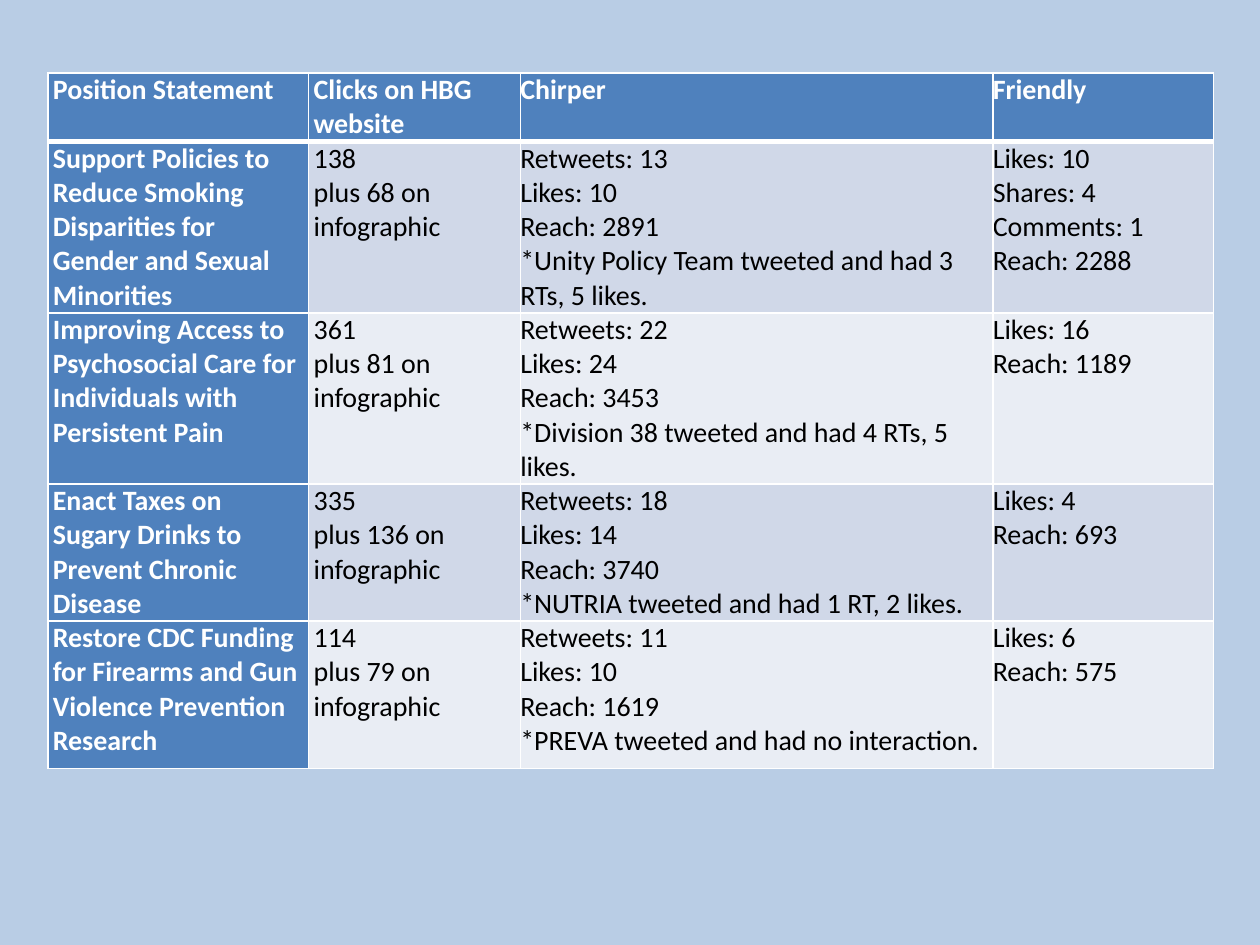
from lxml.etree import SubElement
from pptx import Presentation
from pptx.dml.color import RGBColor as RGB
from pptx.oxml.ns import qn
from pptx.util import Inches, Pt

COLORS = {"bg": "B9CDE5", "head": "4F81BD", "odd": "D0D8E8",
          "even": "E9EDF4", "white": "FFFFFF", "text": "000000"}
FONT, SIZE = "Calibri", 16
COL_WIDTHS = [2.07, 1.68, 3.75, 1.75]
ROW_HEIGHTS = [0.47, 1.17, 0.95, 0.95, 1.17]

# \n starts a paragraph, \v breaks a line within one
ROWS = [
    ["Position Statement", "Clicks on HBG website", "Chirper", "Friendly"],
    ["Support Policies to Reduce Smoking Disparities for Gender and Sexual Minorities",
     "138\vplus 68 on infographic",
     "Retweets: 13\vLikes: 10\vReach: 2891\n*Unity Policy Team tweeted and had 3 RTs, 5 likes.",
     "Likes: 10\nShares: 4\nComments: 1\nReach: 2288"],
    ["Improving Access to Psychosocial Care for Individuals with Persistent Pain",
     "361\vplus 81 on infographic",
     "Retweets: 22\vLikes: 24\vReach: 3453\n*Division 38 tweeted and had 4 RTs, 5 likes.",
     "Likes: 16\nReach: 1189"],
    ["Enact Taxes on Sugary Drinks to Prevent Chronic Disease",
     "335\vplus 136 on infographic",
     "Retweets: 18\vLikes: 14\vReach: 3740\n*NUTRIA tweeted and had 1 RT, 2 likes.",
     "Likes: 4\nReach: 693"],
    ["Restore CDC Funding for Firearms and Gun Violence Prevention Research",
     "114\vplus 79 on infographic",
     "Retweets: 11\vLikes: 10\vReach: 1619\n*PREVA tweeted and had no interaction.",
     "Likes: 6\nReach: 575"],
]


def add_borders(cell, widths):
    """Draw white cell borders; widths maps each side to points."""
    tcPr = cell._tc.get_or_add_tcPr()
    for i, (side, width) in enumerate(widths.items()):
        ln = SubElement(tcPr, qn(f"a:ln{side}"), w=str(Pt(width)))
        fill = SubElement(ln, qn("a:solidFill"))
        SubElement(fill, qn("a:srgbClr"), val=COLORS["white"])
        tcPr.insert(i, ln)  # borders come before the fill


prs = Presentation()
prs.slide_width, prs.slide_height = Inches(10), Inches(7.5)
s = prs.slides.add_slide(prs.slide_layouts[6])

# Background
s.background.fill.solid()
s.background.fill.fore_color.rgb = RGB.from_string(COLORS["bg"])

# Table grid
table = s.shapes.add_table(len(ROWS), len(COL_WIDTHS), Inches(0.38), Inches(0.58),
                           Inches(sum(COL_WIDTHS)), Inches(sum(ROW_HEIGHTS))).table
table.first_col = True
for col, width in zip(table.columns, COL_WIDTHS):
    col.width = Inches(width)
for row, height in zip(table.rows, ROW_HEIGHTS):
    row.height = Inches(height)

# Cells
for r, texts in enumerate(ROWS):
    for c, text in enumerate(texts):
        cell = table.cell(r, c)
        is_head = r == 0 or c == 0
        cell.margin_left = cell.margin_right = Inches(0.04 if c < 2 else 0)
        cell.margin_top = cell.margin_bottom = 0
        cell.fill.solid()
        fill = "head" if is_head else "odd" if r % 2 else "even"
        cell.fill.fore_color.rgb = RGB.from_string(COLORS[fill])
        add_borders(cell, {"L": 1, "R": 1, "T": 3 if r == 1 else 1, "B": 3 if r == 0 else 1})

        cell.text_frame.text = text
        for p in cell.text_frame.paragraphs:
            for run in p.runs:
                run.font.name, run.font.size, run.font.bold = FONT, Pt(SIZE), is_head
                run.font.color.rgb = RGB.from_string(COLORS["white" if is_head else "text"])
            for br in p._p.findall(qn("a:br")):
                SubElement(br, qn("a:rPr"), sz=str(SIZE * 100))

prs.save("out.pptx")
